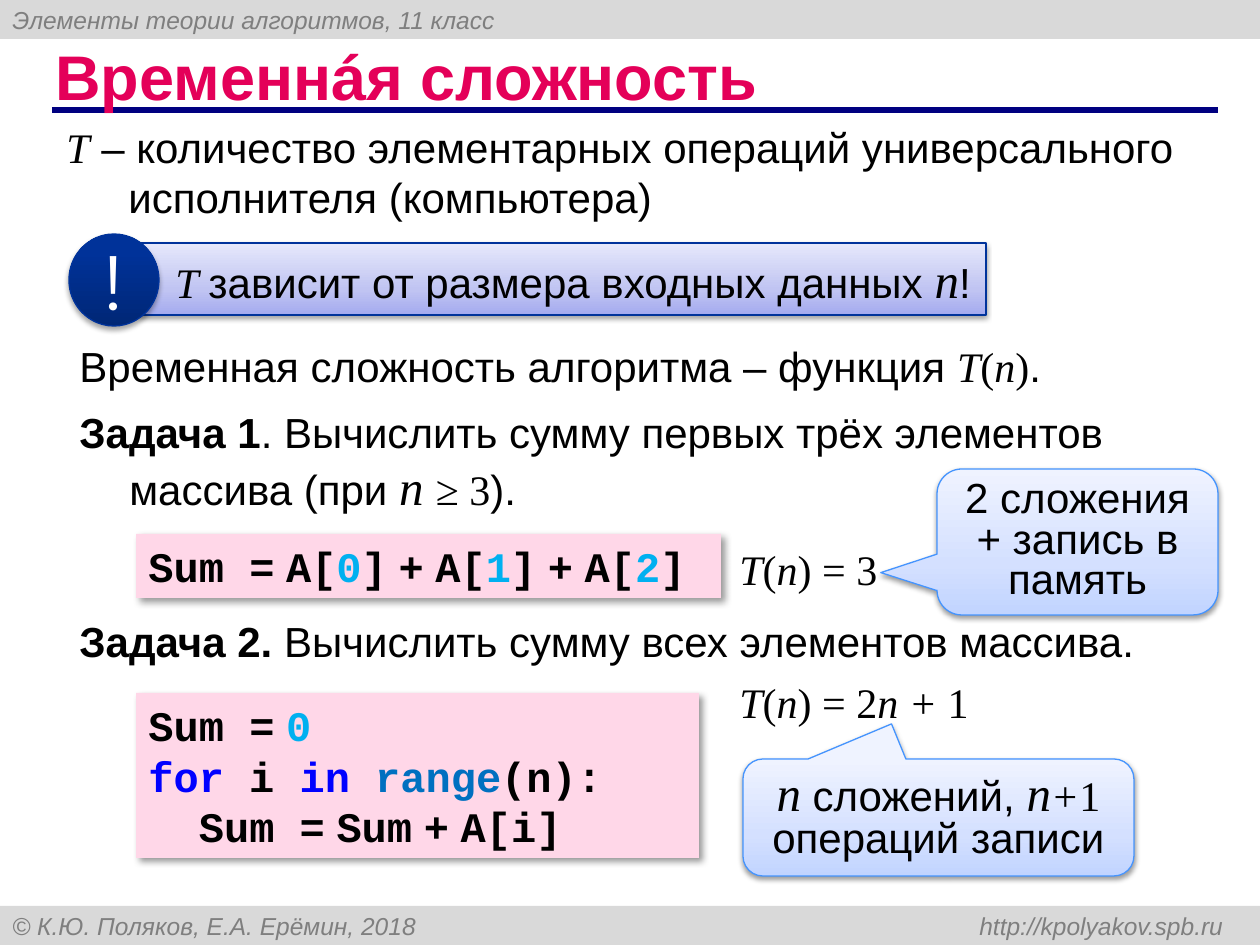
import pptx
import pptx.util
import pptx.dml.color
import pptx.enum.shapes
import pptx.enum.text
from lxml import etree
from pptx.oxml.ns import qn

PX = 914400 / 126
WIDE, HIGH = 1260, 945
KIND = pptx.enum.shapes.MSO_SHAPE
ALIGN = pptx.enum.text.PP_ALIGN
ANCHOR = pptx.enum.text.MSO_ANCHOR

HUES = {
    "bar": "D9D9D9", "gray": "7F7F7F", "navy": "000080", "title": "E40059",
    "black": "000000", "white": "FFFFFF", "pink": "FFD7E8", "edge": "00339B",
    "sky": "4594FE", "digit": "00B0F0", "key": "0000FF", "call": "0070C0",
}
FADES = {
    "lilac": [(0, "A4AAEF"), (35, "C0C4F2"), (100, "E6E8FB")],
    "disc": [(0, "002776"), (80, "003299"), (100, "00339A")],
    "cloud": [(0, "C1D4FF"), (35, "D4E0FF"), (100, "EFF3FF")],
}
# opacity %, blur pt, distance pt, angle
SHADES = {"soft": (38, 3.1, 1.6, 90), "disc": (35, 3.1, 1.8, 90), "code": (40, 4, 3, 45)}

SANS, SERIF, MONO = "Arial", "Times New Roman", "Courier New"
# font, size, bold, italic, colour
STYLES = {
    "bar": (SANS, 14, False, True, "gray"),
    "title": (SANS, 36, True, False, "title"),
    "mark": ("Montserrat", 44, False, False, "white"),
    "text": (SANS, 24, False, False, "black"),
    "bold": (SANS, 24, True, False, "black"),
    "var": (SERIF, 24, False, True, "black"),
    "big": (SERIF, 28, False, True, "black"),
    "math": (SERIF, 24, False, False, "black"),
    "code": (MONO, 24, True, False, "black"),
    "digit": (MONO, 24, True, False, "digit"),
    "key": (MONO, 24, True, False, "key"),
    "call": (MONO, 24, True, False, "call"),
}

FUNC = [("var", "T"), ("math", "("), ("var", "n"), ("math", ")")]
GAP = ("bold", " ")
SET = [("code", "Sum ="), GAP]
PLUS = [GAP, ("code", "+"), GAP]


def item(index):
    return [("code", "A["), ("digit", index), ("code", "]")]


HEAD = [("bar", "Элементы теории алгоритмов, 11 класс")]
FOOT = [("bar", "© К.Ю. Поляков, Е.А. Ерёмин, 2018\thttp://kpolyakov.spb.ru")]
TITLE = [("title", "Временнáя сложность")]
ABOUT = [("var", "T"), ("text", " – количество элементарных операций "
                                "универсального исполнителя (компьютера)")]
SIZE = [("var", "T "), ("text", "зависит от размера входных данных "),
        ("big", "n"), ("text", "!")]
TIME = [("text", "Временная сложность алгоритма – функция "), *FUNC, ("text", ".")]
TASK1 = [("bold", "Задача 1"),
         ("text", ". Вычислить сумму первых трёх элементов массива (при "),
         ("big", "n "), ("math", "≥ 3"), ("text", ").")]
TASK2 = [("bold", "Задача 2."), ("text", " Вычислить сумму всех элементов массива.")]
CODE1 = [SET + item("0") + PLUS + item("1") + PLUS + item("2")]
CODE2 = [
    SET + [("digit", "0")],
    [("key", "for"), ("code", " i "), ("key", "in "), ("call", "range"), ("code", "(n):")],
    [("code", "  ")] + SET + [("code", "Sum")] + PLUS + [("code", "A[i]")],
]
COST1 = FUNC + [("math", " = 3")]
COST2 = FUNC + [("math", " = 2"), ("var", "n + "), ("math", "1")]
NOTE1 = [("text", "2 сложения + запись в память")]
NOTE2 = [("big", "n"), ("text", " сложений, "), ("big", "n"), ("var", "+"),
         ("math", "1 "), ("text", "операций записи")]


def px(n):
    return pptx.util.Emu(round(n * PX))


def rgb(name):
    return pptx.dml.color.RGBColor.from_string(HUES[name])


def style(font, name):
    font.name, size, font.bold, font.italic, hue = STYLES[name]
    font.size = pptx.util.Pt(size)
    font.color.rgb = rgb(hue)


def add(tag, up, **atts):
    return etree.SubElement(up, qn("a:" + tag), {k: str(v) for k, v in atts.items()})


def write(shape, paras, mid=True, wrap=True, left=0, hang=0, note=False, center=False):
    frame = shape.text_frame
    frame.word_wrap = wrap
    frame.vertical_anchor = ANCHOR.MIDDLE if mid else ANCHOR.TOP
    for i, runs in enumerate(paras):
        para = frame.add_paragraph() if i else frame.paragraphs[0]
        para.alignment = ALIGN.CENTER if note or center else ALIGN.LEFT
        if note:
            para.line_spacing = 0.8
            para.space_after = pptx.util.Pt(10)
        if left:
            props = para._p.get_or_add_pPr()
            props.set("marL", str(px(left)))
            props.set("indent", str(-px(hang)))
        for name, words in runs:
            run = para.add_run()
            run.text = words
            if len(runs) > 1:
                style(run.font, name)
        if len(runs) == 1:
            style(para.font, runs[0][0])


def fade(shape, stops):
    """Fill upward with a gradient of several stops."""
    shape.fill.gradient()
    shape.fill.gradient_angle = 90
    row = shape._element.spPr.find(qn("a:gradFill")).find(qn("a:gsLst"))
    for old in list(row):
        row.remove(old)
    for at, hue in stops:
        add("srgbClr", add("gs", row, pos=at * 1000), val=hue)


def shade(shape, kind):
    alpha, blur, far, turn = SHADES[kind]
    fx = shape._element.spPr.find(qn("a:effectLst"))
    drop = add("outerShdw", fx, blurRad=round(blur * 12700), dist=round(far * 12700),
               dir=turn * 60000, rotWithShape=0)
    add("alpha", add("srgbClr", drop, val=HUES["black"]), val=alpha * 1000)


def draw(slide, box, fill, paras, kind=KIND.RECTANGLE, edge=None, dark=None, bend=(), **how):
    shape = slide.shapes.add_shape(kind, *map(px, box))
    for i, value in enumerate(bend):
        shape.adjustments[i] = value
    if fill in FADES:
        fade(shape, FADES[fill])
    else:
        shape.fill.solid()
        shape.fill.fore_color.rgb = rgb(fill)
    if edge:
        shape.line.color.rgb = rgb(edge)
        shape.line.width = pptx.util.Pt(0.75)
    else:
        shape.line.fill.background()
    shape.shadow.inherit = False
    if dark:
        shade(shape, dark)
    write(shape, paras, **how)
    return shape


def label(slide, box, runs, **how):
    write(slide.shapes.add_textbox(*map(px, box)), [runs], **how)


def main():
    deck = pptx.Presentation()
    deck.slide_width, deck.slide_height = px(WIDE), px(HIGH)
    slide = deck.slides.add_slide(deck.slide_layouts[6])

    draw(slide, (0, 0, WIDE, 39), "bar", [HEAD])
    foot = draw(slide, (0, HIGH - 39, WIDE, 39), "bar", [FOOT])
    tabs = add("tabLst", foot.text_frame.paragraphs[0]._p.get_or_add_pPr())
    tabs.getparent().insert(0, tabs)
    add("tab", tabs, pos=px(1211), algn="r")

    rule = slide.shapes.add_connector(
        pptx.enum.shapes.MSO_CONNECTOR.STRAIGHT, *map(px, (52, 110, 1218, 110)))
    rule.line.color.rgb = rgb("navy")
    rule.line.width = pptx.util.Pt(3)
    add("effectLst", rule._element.spPr)

    label(slide, (43, 42, 1154, 66), TITLE)
    label(slide, (54, 115, 1206, 115), ABOUT, mid=False, left=62, hang=62)
    draw(slide, (139, 243, 847, 72), "lilac", [SIZE], edge="edge", dark="soft", left=24)
    draw(slide, (69, 234, 90, 92), "disc", [[("mark", "!")]], kind=KIND.OVAL,
         edge="edge", dark="disc", wrap=False, center=True)

    label(slide, (67, 334, 1000, 64), TIME, wrap=False)
    for top, high, task in ((399, 124, TASK1), (609, 64, TASK2)):
        label(slide, (67, top, 1147, high), task, left=50, hang=50)
    for top, wide, high, code in ((534, 585, 64, CODE1), (693, 563, 165, CODE2)):
        draw(slide, (136, top, wide, high), "pink", code, dark="code")
    for top, wide, cost in ((537, 168, COST1), (670, 257, COST2)):
        label(slide, (727, top, wide, 64), cost, mid=False, wrap=False)
    for box, bend, note in (
        ((937, 469, 281, 146), (-0.7, 0.21, 0.17), NOTE1),
        ((743, 759, 391, 117), (-0.12, -0.8, 0.17), NOTE2),
    ):
        draw(slide, box, "cloud", [note], kind=KIND.ROUNDED_RECTANGULAR_CALLOUT,
             edge="sky", dark="soft", bend=bend, note=True)

    deck.save("out.pptx")


if __name__ == "__main__":
    main()
